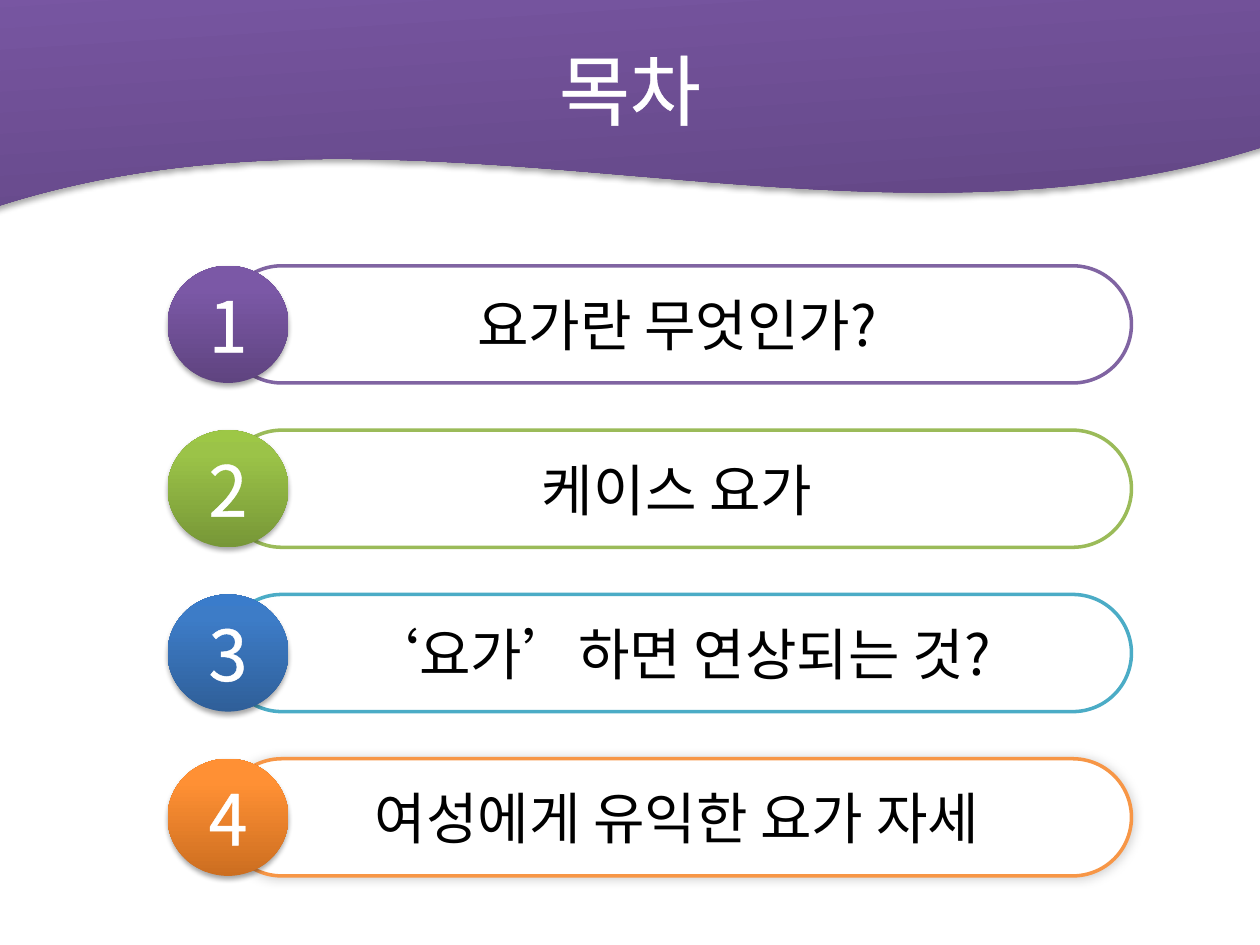
from pptx import Presentation
from pptx.dml.color import RGBColor
from pptx.enum.shapes import MSO_SHAPE
from pptx.enum.text import MSO_ANCHOR, PP_ALIGN
from pptx.oxml import parse_xml
from pptx.oxml.ns import nsdecls
from pptx.util import Inches, Pt

FONT = "Noto Sans CJK KR"
TITLE = "목차"
PURPLE = ("5F4480", "7B58A6", "7C57A8")
ITEMS = [
    ("요가란 무엇인가?", "8064A2", PURPLE),
    ("케이스 요가", "9BBB59", ("779737", "9BC348", "9DC746")),
    ("‘요가’하면 연상되는 것?", "4BACC6", ("2F5F99", "3D7CC7", "3A7CCB")),
    ("여성에게 유익한 요가 자세", "F79646", ("CC6E20", "FF9034", "FF9136")),
]
TOP, PITCH, HEIGHT = 2.11, 1.304, 0.93


def rgb(value):
    return RGBColor.from_string(value)


def add_shape(kind, left, top, width, height):
    sp = s.shapes.add_shape(kind, Inches(left), Inches(top), Inches(width), Inches(height))
    sp.shadow.inherit = False
    return sp


def add_shadow(sp, opacity, blur, distance, angle):
    effects = sp._element.spPr.find("{*}effectLst")
    effects.append(parse_xml(
        f'<a:outerShdw {nsdecls("a")} blurRad="{Pt(blur)}" dist="{Pt(distance)}" '
        f'dir="{angle * 60000}" rotWithShape="0"><a:srgbClr val="000000">'
        f'<a:alpha val="{opacity * 1000}"/></a:srgbClr></a:outerShdw>'))


def make_glossy(sp, colors):
    stops = "".join(
        f'<a:gs pos="{pos * 1000}"><a:srgbClr val="{color}"/></a:gs>'
        for pos, color in zip((0, 80, 100), colors))
    sp._element.spPr.insert(2, parse_xml(
        f'<a:gradFill {nsdecls("a")} rotWithShape="1"><a:gsLst>{stops}</a:gsLst>'
        '<a:lin ang="16200000" scaled="0"/></a:gradFill>'))
    sp.line.fill.background()
    add_shadow(sp, 35, 3.1, 1.8, 90)


def set_text(sp, text, size, color, outlined=False):
    tf = sp.text_frame
    tf.text = text
    tf.word_wrap = True
    tf.vertical_anchor = MSO_ANCHOR.MIDDLE
    p = tf.paragraphs[0]
    p.alignment = PP_ALIGN.CENTER
    r = p.runs[0]
    r.font.size = Pt(size)
    r.font.name = FONT
    r.font.color.rgb = rgb(color)
    props = r.font._element
    props.find("{*}latin").addnext(
        parse_xml(f'<a:ea {nsdecls("a")} typeface="{FONT}"/>'))
    if outlined:
        props.insert(0, parse_xml(
            f'<a:ln {nsdecls("a")} w="{Pt(1.45)}"><a:solidFill>'
            f'<a:srgbClr val="{color}"/></a:solidFill></a:ln>'))


prs = Presentation()
prs.slide_width, prs.slide_height = Inches(10), Inches(7.5)
s = prs.slides.add_slide(prs.slide_layouts[5])

wave = add_shape(MSO_SHAPE.WAVE, -0.39, -0.86, 10.7, 2.58)
wave.rotation = 356.3
make_glossy(wave, PURPLE)
title = s.shapes.title
title._element.addprevious(wave._element)
title.left, title.top = Inches(0.5), Inches(0.08)
title.width, title.height = Inches(9), Inches(1.25)
set_text(title, TITLE, 44, "FFFFFF", outlined=True)

for i, (text, border, colors) in enumerate(ITEMS):
    top = TOP + i * PITCH
    bar = add_shape(MSO_SHAPE.ROUNDED_RECTANGLE, 1.77, top, 7.21, HEIGHT)
    bar.adjustments[0] = 0.5
    bar.fill.solid()
    bar.fill.fore_color.rgb = rgb("FFFFFF")
    bar.line.color.rgb = rgb(border)
    bar.line.width = Pt(2)
    set_text(bar, text, 32, "000000")
    if i == len(ITEMS) - 1:
        add_shadow(bar, 20, 6, 0, 315)
    badge = add_shape(MSO_SHAPE.OVAL, 1.33, top, 0.96, HEIGHT)
    make_glossy(badge, colors)
    set_text(badge, str(i + 1), 40, "FFFFFF", outlined=True)

prs.save("out.pptx")
